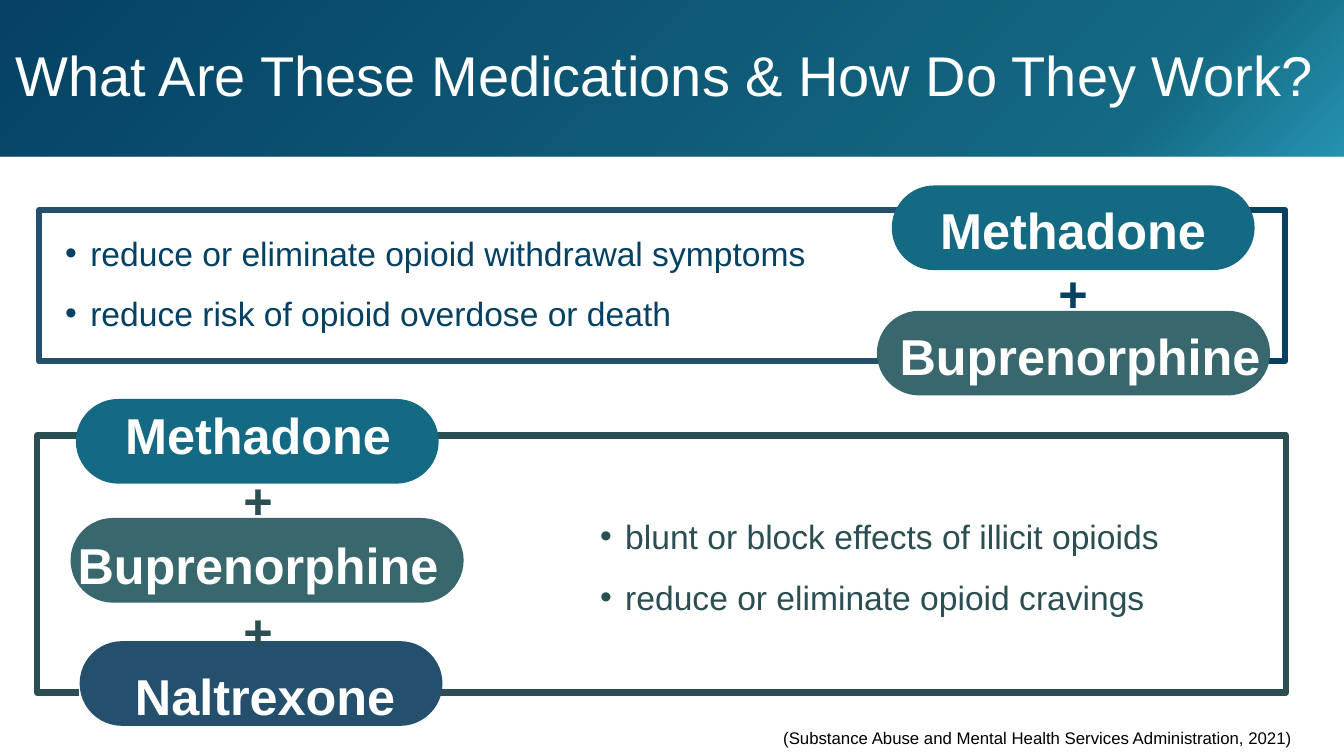
import dataclasses

import lxml.etree
import pptx
import pptx.dml.color
import pptx.enum.shapes
import pptx.enum.text
import pptx.oxml.ns
import pptx.util

Pt = pptx.util.Pt
RGB = pptx.dml.color.RGBColor.from_string
SHAPE = pptx.enum.shapes.MSO_SHAPE
ALIGN = pptx.enum.text.PP_ALIGN
MIDDLE = pptx.enum.text.MSO_ANCHOR.MIDDLE
qn = pptx.oxml.ns.qn


@dataclasses.dataclass(frozen=True)
class Theme:
    font: str = "Arial"
    white: str = "FFFFFF"
    black: str = "000000"
    navy: str = "054163"
    blue: str = "24506D"
    teal: str = "156A83"
    sky: str = "1C8EAE"
    green: str = "38686D"
    pine: str = "2A4E52"
    title_size: int = 40
    name_size: int = 36
    list_size: int = 24
    source_size: int = 12
    frame_line: float = 4.5
    pill_height: float = 60.5


THEME = Theme()


# Shared helpers
def place(item, left, top, width, height):
    item.left, item.top = Pt(left), Pt(top)
    item.width, item.height = Pt(width), Pt(height)


def prepare_text(item, insets=(0, 0, 0, 0)):
    frame = item.text_frame
    frame.word_wrap = True
    frame.auto_size = pptx.enum.text.MSO_AUTO_SIZE.NONE
    frame.vertical_anchor = MIDDLE
    (frame.margin_left, frame.margin_top,
     frame.margin_right, frame.margin_bottom) = map(Pt, insets)
    return frame


def write_lines(frame, lines, size, align, bold=False, spacing=1.0, gap=0, indent=0):
    """Write (text, colour) pairs, one paragraph each."""
    for index, (text, color) in enumerate(lines):
        para = frame.add_paragraph() if index else frame.paragraphs[0]
        if indent:
            properties = para._p.get_or_add_pPr()
            properties.set("marL", str(Pt(indent)))
            properties.set("indent", str(-Pt(indent)))
            bullet = lxml.etree.SubElement(properties, qn("a:buChar"))
            bullet.set("char", "•")
        para.alignment = align
        para.line_spacing = spacing
        para.space_before = Pt(gap if index else 0)
        para.space_after = Pt(0)
        span = para.add_run()
        span.text = text
        span.font.name = THEME.font
        span.font.size = Pt(size)
        span.font.bold = bold
        span.font.color.rgb = RGB(color)


def bring_to_front(item):
    item.element.getparent().append(item.element)


# Title band
def draw_title(page, box):
    title = page.shapes.title
    place(title, *box)
    title.fill.gradient()
    title.fill.gradient_angle = 135
    stops = title.element.spPr.find(".//" + qn("a:gsLst"))
    for stop in list(stops):
        stops.remove(stop)
    for position, color, alpha in ((0, THEME.sky, 95), (16, THEME.teal, 100),
                                   (100, THEME.navy, 100)):
        stop = lxml.etree.SubElement(stops, qn("a:gs"), pos=str(position * 1000))
        shade = lxml.etree.SubElement(stop, qn("a:srgbClr"), val=color)
        lxml.etree.SubElement(shade, qn("a:alpha"), val=str(alpha * 1000))
    write_lines(prepare_text(title),
                [("What Are These Medications & How Do They Work? ", THEME.white)],
                THEME.title_size, ALIGN.CENTER, spacing=0.9)


# Frame made of two square brackets
def draw_frame(page, box, left_width, right_width, left_color, right_color):
    left, top, width, height = box
    for kind, offset, span_width, color in (
            (SHAPE.LEFT_BRACKET, 0, left_width, left_color),
            (SHAPE.RIGHT_BRACKET, width - right_width, right_width, right_color)):
        bracket = page.shapes.add_shape(kind, Pt(left + offset), Pt(top),
                                        Pt(span_width), Pt(height))
        bracket.adjustments[0] = 0
        bracket.shadow.inherit = False
        bracket.fill.background()
        bracket.line.color.rgb = RGB(color)
        bracket.line.width = Pt(THEME.frame_line)


def draw_pills(page, box, pills):
    for x, y, width, color in pills:
        pill = page.shapes.add_shape(SHAPE.ROUNDED_RECTANGLE, Pt(box[0] + x), Pt(box[1] + y),
                                     Pt(width), Pt(THEME.pill_height))
        pill.adjustments[0] = 0.5
        pill.shadow.inherit = False
        pill.fill.solid()
        pill.fill.fore_color.rgb = RGB(color)
        pill.line.fill.background()


def fill_names(holder, box, names, plus_color, gap):
    place(holder, *box)
    bring_to_front(holder)
    lines = [(name, plus_color if name == "+ " else THEME.white) for name in names]
    write_lines(prepare_text(holder), lines, THEME.name_size, ALIGN.CENTER,
                bold=True, spacing=0.9, gap=gap)


def fill_effects(holder, box, effects, color):
    place(holder, *box)
    bring_to_front(holder)
    write_lines(prepare_text(holder), [(effect, color) for effect in effects],
                THEME.list_size, ALIGN.LEFT, gap=14.4, indent=18)


# Upper panel: effects on the left, two medications on the right
def draw_upper_panel(page, box, names, effects):
    left, top = box[:2]
    draw_frame(page, box, 630, 26, THEME.blue, THEME.navy)
    draw_pills(page, box, [(609, -17.5, 259.2, THEME.teal),
                           (598.4, 72, 280.8, THEME.green)])
    fill_effects(effects, (left + 18.5, top + 12, 560, 80),
                 ["reduce or eliminate opioid withdrawal symptoms",
                  "reduce risk of opioid overdose or death"], THEME.navy)
    fill_names(names, (left + 578, top - 7.5, 331.2, 138),
               ["Methadone ", "+ ", "Buprenorphine"], THEME.navy, 6)


# Lower panel: three medications on the left, effects on the right
def draw_lower_panel(page, box, names, effects):
    left, top = box[:2]
    draw_frame(page, box, 30, 615.6, THEME.pine, THEME.pine)
    draw_pills(page, box, [(27.6, -26, 259.2, THEME.teal),
                           (23.8, 59, 280.8, THEME.green),
                           (30.3, 147, 259.2, THEME.blue)])
    fill_effects(effects, (left + 402, top + 53.6, 460, 80),
                 ["blunt or block effects of illicit opioids",
                  "reduce or eliminate opioid cravings"], THEME.pine)
    fill_names(names, (left - 2.8, top - 19.3, 331.2, 229),
               ["Methadone ", "+ ", "Buprenorphine ", "+ ", "Naltrexone"], THEME.pine, 7.7)


# Source line
def draw_source(page, box):
    source = page.shapes.add_textbox(*map(Pt, box))
    write_lines(prepare_text(source),
                [("(Substance Abuse and Mental Health Services Administration, 2021)",
                  THEME.black)], THEME.source_size, ALIGN.RIGHT)


def main():
    deck = pptx.Presentation()
    deck.slide_width, deck.slide_height = Pt(960), Pt(540)
    page = deck.slides.add_slide(deck.slide_layouts.get_by_name("Comparison"))
    holders = {holder.placeholder_format.idx: holder for holder in page.placeholders}
    draw_title(page, (0, 0, 960, 112))
    draw_upper_panel(page, (28, 150, 890, 108), holders[1], holders[2])
    draw_lower_panel(page, (26.6, 311, 892, 183.6), holders[3], holders[4])
    draw_source(page, (537, 512, 386, 29.5))
    deck.save("out.pptx")


if __name__ == "__main__":
    main()
